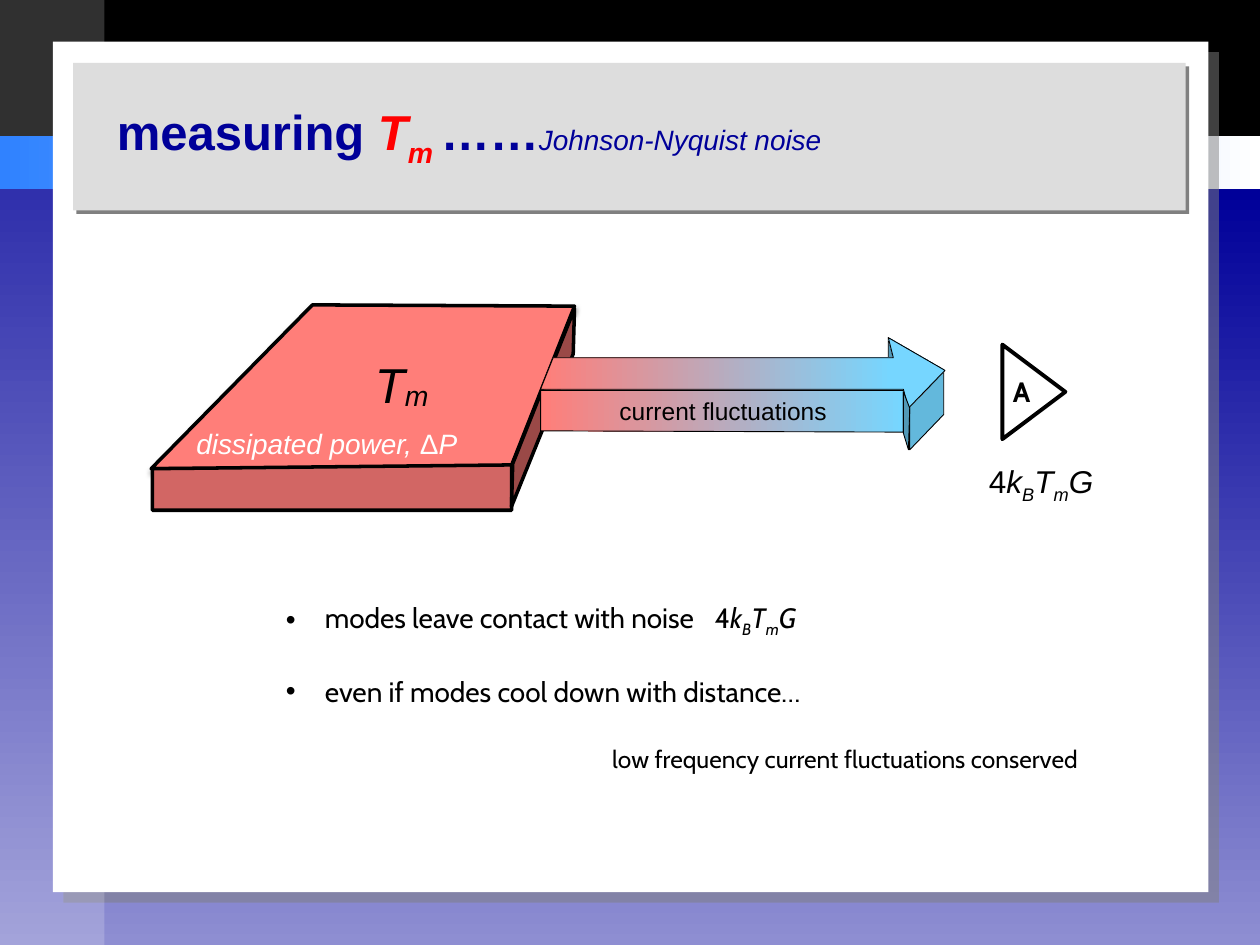
from collections import namedtuple

from lxml.etree import SubElement
from pptx import Presentation
from pptx.dml.color import RGBColor
from pptx.enum.shapes import MSO_SHAPE as Preset
from pptx.enum.text import MSO_ANCHOR as Anchor, PP_ALIGN as Align
from pptx.oxml.ns import qn
from pptx.util import Inches, Pt

BLACK = RGBColor(0x00, 0x00, 0x00)
WHITE = RGBColor(0xFF, 0xFF, 0xFF)
RED = RGBColor(0xFF, 0x00, 0x00)
NAVY = RGBColor(0x00, 0x00, 0x99)
LILAC = RGBColor(0x8E, 0x8E, 0xD2)
BLUE = RGBColor(0x00, 0x66, 0xFF)
PANEL = RGBColor(0xDD, 0xDD, 0xDD)
HOT = RGBColor(0xFF, 0x7E, 0x79)
HOT_FRONT = RGBColor(0xD2, 0x66, 0x64)
HOT_SIDE = RGBColor(0x9A, 0x49, 0x47)
COLD = RGBColor(0x76, 0xD6, 0xFF)
COLD_SIDE = RGBColor(0x63, 0xB8, 0xDC)
COLD_BACK = RGBColor(0x53, 0x9B, 0xBA)
COLD_UNDER = RGBColor(0x52, 0x99, 0xB7)

Box = namedtuple("Box", "left top width height")
Gradient = namedtuple("Gradient", "start end angle reach", defaults=(0, 1))
Shadow = namedtuple("Shadow", "color alpha blur distance angle")

ITALIC = {"italic": True}
UPRIGHT = {"italic": False}
SUB = {"italic": True, "baseline": -25}
NOISE_POWER = [("4", {}), ("k", ITALIC), ("B", SUB), ("T", ITALIC), ("m", SUB), ("G", ITALIC)]


def box_at(left, top, width, height):
    """Return a box measured in inches."""
    return Box(Inches(left), Inches(top), Inches(width), Inches(height))


def within(box, left, top, width, height):
    """Return a box placed relative to the corner of another box."""
    return Box(box.left + Inches(left), box.top + Inches(top), Inches(width), Inches(height))


def cast_shadow(shape, shadow):
    """Give a shape an outer shadow."""
    effects = shape._element.spPr.find(qn("a:effectLst"))
    outer = SubElement(effects, qn("a:outerShdw"), blurRad=str(Pt(shadow.blur)),
                       dist=str(Pt(shadow.distance)), dir=str(shadow.angle * 60000),
                       algn="ctr", rotWithShape="0")
    color = SubElement(outer, qn("a:srgbClr"), val=str(shadow.color))
    SubElement(color, qn("a:alpha"), val=str(shadow.alpha * 1000))


def paint(shape, fill, line_width=0, shadow=None, alpha=100):
    """Set the fill, black outline and shadow of a shape."""
    if isinstance(fill, Gradient):
        shape.fill.gradient()
        shape.fill.gradient_angle = fill.angle
        ends = [(fill.start, 0), (fill.end, fill.reach)]
        for stop, (color, position) in zip(shape.fill.gradient_stops, ends):
            stop.color.rgb = color
            stop.position = position
    else:
        shape.fill.solid()
        shape.fill.fore_color.rgb = fill
    if alpha < 100:
        color = shape._element.spPr.find(qn("a:solidFill")).find(qn("a:srgbClr"))
        SubElement(color, qn("a:alpha"), val=str(alpha * 1000))
    if line_width:
        shape.line.color.rgb = BLACK
        shape.line.width = Pt(line_width)
    else:
        shape.line.fill.background()
    shape.shadow.inherit = False
    if shadow:
        cast_shadow(shape, shadow)


def add_face(shapes, box, corners, fill, line_width, shadow=None):
    """Draw a closed polygon whose corners are inches from the box corner."""
    points = [(box.left + Inches(x), box.top + Inches(y)) for x, y in corners]
    builder = shapes.build_freeform(*points[0], scale=1.0)
    builder.add_line_segments(points[1:], close=True)
    paint(builder.convert_to_shape(), fill, line_width, shadow)


def write_runs(paragraph, runs, base):
    """Add runs that each vary the base format."""
    for text, changes in runs:
        run = paragraph.add_run()
        run.text = text
        for name, value in {**base, **changes}.items():
            if name == "color":
                run.font.color.rgb = value
            elif name == "baseline":
                run._r.get_or_add_rPr().set("baseline", str(value * 1000))
            elif name == "spacing":
                run._r.get_or_add_rPr().set("spc", str(value * 100))
            else:
                setattr(run.font, name, value)


def text_format(size, font="Arial", color=BLACK, **more):
    """Return a base format for runs."""
    return {"name": font, "size": Pt(size), "color": color, **more}


def add_frame(shapes, box, **settings):
    """Add a wrapped text box and return its frame."""
    frame = shapes.add_textbox(*box).text_frame
    for name, value in {"word_wrap": True, **settings}.items():
        setattr(frame, name, value)
    return frame


def add_label(shapes, box, runs, base, align=Align.LEFT, **settings):
    """Add a one-paragraph text box."""
    paragraph = add_frame(shapes, box, **settings).paragraphs[0]
    paragraph.alignment = align
    write_runs(paragraph, runs, base)


def draw_backdrop(shapes, page):
    """Draw the coloured bands, the white sheet and the left strip."""
    sheet_shadow = Shadow(RGBColor(0x80, 0x80, 0x80), 50, 0, 8.5, 45)
    parts = [
        ((0, 0, 10, 1.08), BLACK, {"line_width": 0.75}),
        ((0, 1.08, 10, 0.42), Gradient(BLUE, WHITE), {}),
        ((0, 1.5, 10, 6), Gradient(NAVY, LILAC, 270), {}),
        ((0.42, 0.33, 9.17, 6.75), WHITE, {"shadow": sheet_shadow}),
        ((0, 0, 0.83, 7.5), WHITE, {"alpha": 19}),
    ]
    for place, fill, options in parts:
        paint(shapes.add_shape(Preset.RECTANGLE, *within(page, *place)), fill, **options)


def draw_title(shapes, box):
    """Draw the title panel with its heading."""
    panel = shapes.add_shape(Preset.RECTANGLE, *box)
    paint(panel, PANEL, shadow=Shadow(RGBColor(0x80, 0x80, 0x80), 100, 0, 2.8, 45))
    hot = {"color": RED, "italic": True}
    runs = [("measuring ", {}), ("T", hot), ("m ", {**hot, "baseline": -25}), ("……", {}),
            ("Johnson-Nyquist noise", {"size": Pt(16), "bold": False, "italic": True})]
    add_label(shapes, within(box, 0.25, 0.26, 6, 0.57), runs, text_format(28, color=NAVY, bold=True))


def draw_contact(shapes, box):
    """Draw the hot slab and its labels."""
    add_face(shapes, box, [(0, 1.3), (1.28, 0), (3.36, 0.01), (2.85, 1.3)], HOT, 2,
             Shadow(BLACK, 50, 3, 2, 90))
    add_face(shapes, box, [(0.01, 1.3), (0.01, 1.63), (2.86, 1.63), (2.86, 1.27)], HOT_FRONT, 2)
    add_face(shapes, box, [(3.36, 0.03), (3.35, 0.39), (2.86, 1.6), (2.87, 1.26)], HOT_SIDE, 2)
    add_label(shapes, within(box, 1.45, 0.32, 0.81, 0.62), [("T", {}), ("m", {"baseline": -6})],
              text_format(28, italic=True), Align.RIGHT, vertical_anchor=Anchor.MIDDLE,
              margin_left=Inches(0.06), margin_right=Inches(0.06))
    add_label(shapes, within(box, 0.26, 0.92, 2.36, 0.37),
              [("dissipated power, ", ITALIC), ("Δ", UPRIGHT), ("P", ITALIC)],
              text_format(16, color=WHITE))


def draw_flow(shapes, box):
    """Draw the solid arrow of current fluctuations as one group."""
    parts = shapes.add_group_shape().shapes
    faces = [
        ([(2.76, 0), (2.76, 0.33), (2.8, 0.45), (2.8, 0.16)], COLD_BACK),
        ([(0, 0.42), (0, 0.74), (2.88, 0.75), (2.88, 0.42)], Gradient(HOT, COLD)),
        ([(2.93, 0.55), (2.93, 0.89), (3.2, 0.61), (3.2, 0.27)], COLD_SIDE),
        ([(0.1, 0.16), (0, 0.41), (2.88, 0.41), (2.92, 0.56), (3.21, 0.26), (2.76, 0),
          (2.8, 0.16)], Gradient(HOT, COLD, reach=0.87)),
        ([(2.88, 0.43), (2.88, 0.76), (2.92, 0.89), (2.93, 0.56)], COLD_UNDER),
    ]
    for corners, fill in faces:
        add_face(parts, box, corners, fill, 0.5)
    add_label(parts, within(box, 0.02, 0.38, 2.86, 0.4), [("current fluctuations", {})],
              text_format(14), Align.CENTER, vertical_anchor=Anchor.MIDDLE)


def draw_amplifier(shapes, box):
    """Draw the amplifier triangle and the noise power below it."""
    amplifier = shapes.add_shape(Preset.ISOSCELES_TRIANGLE, *within(box, 0.08, 0, 0.75, 0.5))
    amplifier.rotation = 90
    paint(amplifier, WHITE, 2.25)
    add_label(shapes, within(box, 0.19, 0.06, 0.39, 0.37), [("A", {})],
              text_format(16, "Cabin", bold=True))
    add_label(shapes, within(box, 0, 0.76, 1.08, 0.4), NOISE_POWER, text_format(18))


def write_findings(shapes, box):
    """Write the two bulleted findings and the conclusion."""
    frame = add_frame(shapes, box)
    findings = [
        ([("modes leave contact with noise", {}), (" ", {"spacing": 8})] + NOISE_POWER, 16, 0.31, 0),
        ([("even if modes cool down with distance…", {})], 16, 0.31, 20),
        ([("low frequency current fluctuations conserved", {})], 14, 2.59, 21),
    ]
    for index, (runs, size, indent, gap) in enumerate(findings):
        paragraph = frame.add_paragraph() if index else frame.paragraphs[0]
        properties = paragraph._p.get_or_add_pPr()
        properties.set("marL", str(Inches(indent)))
        if size == 16:
            properties.set("indent", str(-Inches(indent)))
            SubElement(properties, qn("a:buFont"), typeface="Arial")
            SubElement(properties, qn("a:buChar"), char="•")
        if gap:
            paragraph.space_before = Pt(gap)
        write_runs(paragraph, runs, text_format(size, "Cabin"))


def main():
    """Build and save the slide."""
    deck = Presentation()
    deck.slide_width, deck.slide_height = Inches(10), Inches(7.5)
    shapes = deck.slides.add_slide(deck.slide_layouts[6]).shapes
    draw_backdrop(shapes, box_at(0, 0, 10, 7.5))
    draw_title(shapes, box_at(0.58, 0.5, 8.83, 1.17))
    draw_contact(shapes, box_at(1.2, 2.42, 3.36, 1.63))
    draw_flow(shapes, box_at(4.29, 2.68, 3.21, 0.89))
    write_findings(shapes, box_at(2.17, 4.72, 7.02, 1.45))
    draw_amplifier(shapes, box_at(7.75, 2.86, 1.08, 1.16))
    deck.save("out.pptx")


if __name__ == "__main__":
    main()
